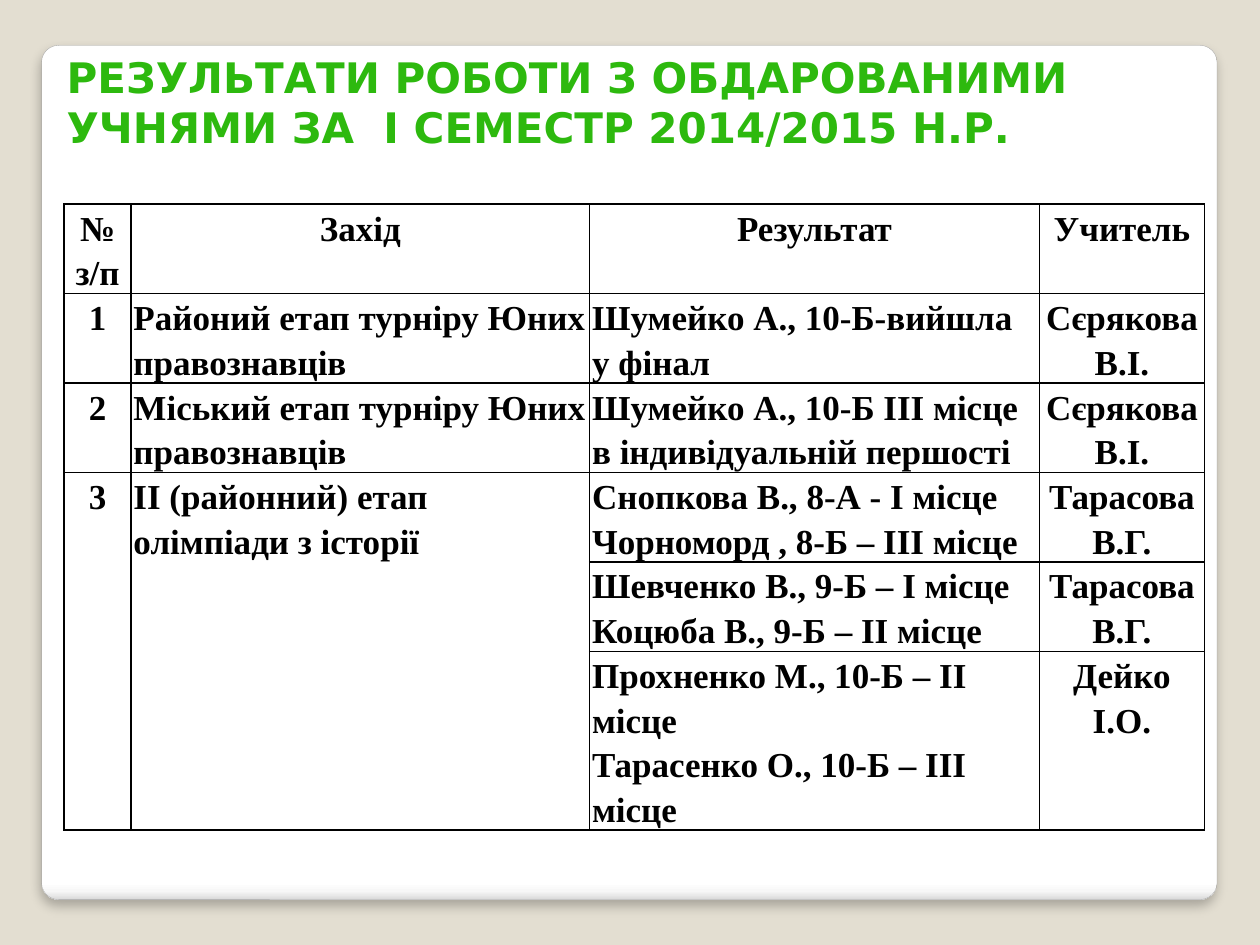
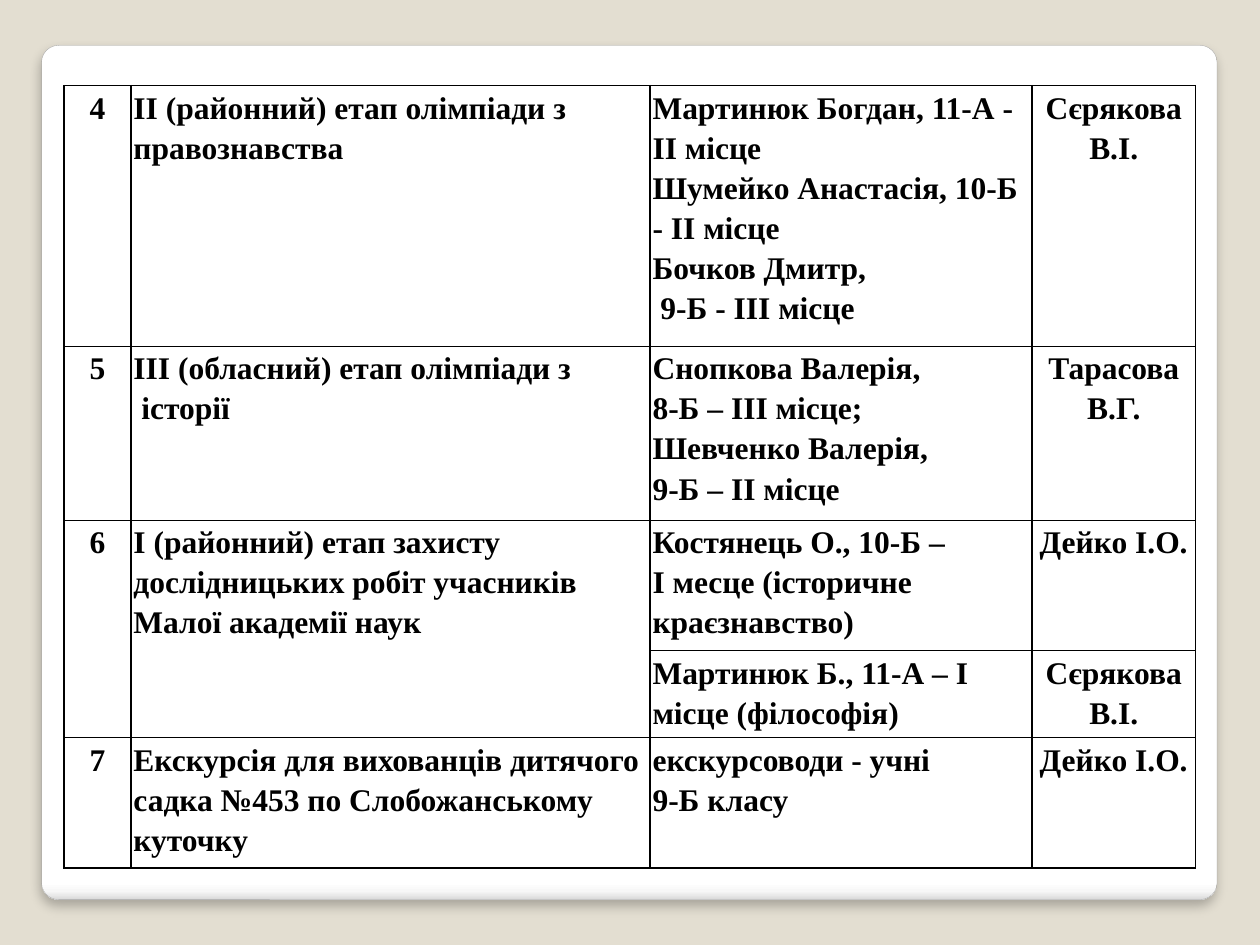
from dataclasses import dataclass

from lxml.etree import SubElement
from pptx import Presentation
from pptx.dml.color import RGBColor
from pptx.enum.shapes import MSO_SHAPE
from pptx.enum.text import MSO_ANCHOR, PP_ALIGN
from pptx.oxml.ns import qn
from pptx.util import Inches, Pt


@dataclass(frozen=True)
class Theme:
    back: str = "E3DED1"
    edge: str = "A4A4A4"
    green: str = "2DB90E"
    ink: str = "000000"
    fade: tuple = ((0, "FFFFFF"), (98, "FFFFFF"), (99, "F7F7F7"), (100, "DADADA"))
    head: str = "DejaVu Sans"
    body: str = "Times New Roman"
    big: int = 24
    mid: int = 20
    small: int = 18
    lead: float = 1.15


WIDE, HIGH = Inches(10), Inches(7.5)
COLS, ROWS = 100, 75


def node(top, tag, **attrs):
    return SubElement(top, qn(tag), {k: str(v) for k, v in attrs.items()})


def tint(top, color):
    return node(top, "a:srgbClr", val=color)


def apply(item, style):
    for name, value in style.items():
        setattr(item, name, value)


class Deck:
    """Holds the theme and the current slide; lengths are grid columns and rows."""

    def __init__(self, theme):
        self.theme = theme
        self.prs = Presentation()
        apply(self.prs, {"slide_width": WIDE, "slide_height": HIGH})

    def x(self, cols):
        return round(WIDE * cols / COLS)

    def y(self, rows):
        return round(HIGH * rows / ROWS)

    def box(self, left, top, width, height):
        return self.x(left), self.y(top), self.x(width), self.y(height)

    def page(self):
        self.slide = self.prs.slides.add_slide(self.prs.slide_layouts[6])
        fill = self.slide.background.fill
        fill.solid()
        fill.fore_color.rgb = RGBColor.from_string(self.theme.back)
        self.card()

    def card(self):
        shape = self.slide.shapes.add_shape(
            MSO_SHAPE.ROUNDED_RECTANGLE, *self.box(3.3, 3.6, 93.3, 67.8))
        shape.adjustments[0] = 0.02
        shape.line.color.rgb = RGBColor.from_string(self.theme.edge)
        shape.line.width = Pt(0.16)
        shape.fill.gradient()
        shape.fill.gradient_angle = 270
        stops = shape.element.spPr.find(".//" + qn("a:gsLst"))
        stops.clear()
        for place, color in self.theme.fade:
            tint(node(stops, "a:gs", pos=place * 1000), color)
        shape.shadow.inherit = False
        effect = shape.element.spPr.find(qn("a:effectLst"))
        shade = node(effect, "a:outerShdw", blurRad=Pt(6), dist=Pt(4),
                     dir=90 * 60000, algn="t", rotWithShape=0)
        node(tint(shade, self.theme.ink), "a:alpha", val=25000)

    def label(self, frame, text, face, size, color, **para):
        frame.text = text
        font = {"name": face, "size": Pt(size), "bold": True}
        for line in frame.paragraphs:
            apply(line, para)
            for run in line.runs:
                apply(run.font, font)
                run.font.color.rgb = RGBColor.from_string(color)

    def title(self, text):
        frame = self.slide.shapes.add_textbox(*self.box(4.3, 3.6, 92.1, 9.1)).text_frame
        frame.word_wrap = True
        look = self.theme
        self.label(frame, text, look.head, look.big, look.green)

    def border(self, cell):
        """Draws a thin line on all four sides of a cell."""
        props = cell._tc.get_or_add_tcPr()
        for side in "LRTB":
            line = node(props, f"a:ln{side}", w=Pt(1))
            tint(node(line, "a:solidFill"), self.theme.ink)

    def table(self, top, high, widths, lines, rows, size, header=False):
        """Shares the height by lines of text; None joins a cell to the one above."""
        count = len(rows)
        grid = self.slide.shapes.add_table(
            count, len(widths), *self.box(5.1, top, sum(widths), high)).table
        apply(grid, {"first_row": False, "horz_banding": False})
        for col, width in zip(grid.columns, widths):
            col.width = self.x(width)
        for row, part in zip(grid.rows, lines):
            row.height = self.y(high * part / sum(lines))
        pad = self.x(0.2)
        style = {"margin_left": pad, "margin_right": pad, "margin_top": 0,
                 "margin_bottom": 0, "vertical_anchor": MSO_ANCHOR.TOP}
        look = self.theme
        for r, row in enumerate(rows):
            for c, text in enumerate(row):
                cell = grid.cell(r, c)
                apply(cell, style)
                self.border(cell)
                cell.fill.background()
                if text is None:
                    continue
                mid = c in (0, len(widths) - 1) or (header and r == 0)
                self.label(cell.text_frame, text, look.body, size, look.ink,
                           alignment=PP_ALIGN.CENTER if mid else PP_ALIGN.LEFT,
                           line_spacing=look.lead)
                last = r
                while last + 1 < count and rows[last + 1][c] is None:
                    last += 1
                if last > r:
                    cell.merge(grid.cell(last, c))


FIRST = [
    ("№ з/п", "Захід", "Результат", "Учитель"),
    ("1", "Районий етап турніру Юних правознавців",
     "Шумейко А., 10-Б-вийшла у фінал", "Сєрякова В.І."),
    ("2", "Міський етап турніру Юних правознавців",
     "Шумейко А., 10-Б ІІІ місце в індивідуальній першості", "Сєрякова В.І."),
    ("3", "ІІ (районний) етап олімпіади з історії",
     "Снопкова В., 8-А - І місце\nЧорноморд , 8-Б – ІІІ місце", "Тарасова В.Г."),
    (None, None, "Шевченко В., 9-Б – І місце\nКоцюба В., 9-Б – ІІ місце", "Тарасова В.Г."),
    (None, None, "Прохненко М., 10-Б – ІІ місце\nТарасенко О., 10-Б – ІІІ місце",
     "Дейко І.О."),
]
SECOND = [
    ("4", "ІІ (районний) етап олімпіади з правознавства",
     "Мартинюк Богдан, 11-А - ІІ місце\vШумейко Анастасія, 10-Б - ІІ місце\v"
     "Бочков Дмитр,\n 9-Б - ІІІ місце", "Сєрякова В.І."),
    ("5", "ІІІ (обласний) етап олімпіади з\n історії",
     "Снопкова Валерія,\n8-Б – ІІІ місце;\nШевченко Валерія,\n9-Б – ІІ місце",
     "Тарасова В.Г."),
    ("6", "І (районний) етап захисту дослідницьких робіт учасників Малої академії наук",
     "Костянець О., 10-Б –\nІ месце (історичне краєзнавство)", "Дейко І.О."),
    (None, None, "Мартинюк Б., 11-А – І місце (філософія)", "Сєрякова В.І."),
    ("7", "Екскурсія для вихованців дитячого садка №453 по Слобожанському куточку",
     "екскурсоводи - учні\n9-Б класу", "Дейко І.О."),
]


def main():
    theme = Theme()
    deck = Deck(theme)
    deck.page()
    deck.table(16.2, 49.7, (5.3, 36.4, 35.7, 13.1), (2, 2, 2, 2, 2, 4),
               FIRST, theme.mid, header=True)
    deck.title("РЕЗУЛЬТАТИ РОБОТИ З ОБДАРОВАНИМИ УЧНЯМИ ЗА  І СЕМЕСТР 2014/2015 Н.Р.")
    deck.page()
    deck.table(6.8, 62.1, (5.3, 41.2, 30.3, 13), (6, 4, 3, 2, 3), SECOND, theme.small)
    deck.prs.save("out.pptx")


if __name__ == "__main__":
    main()
